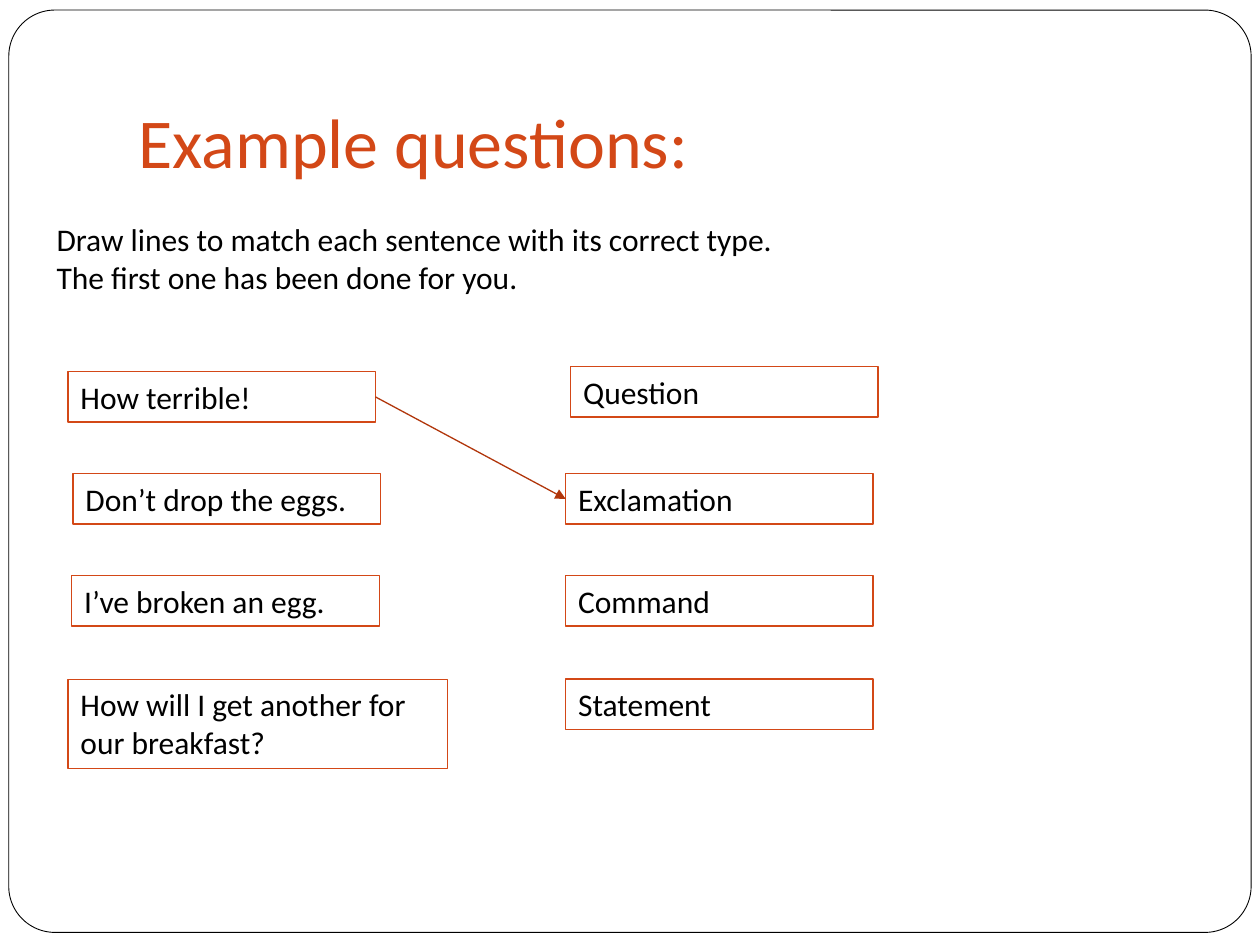
import pptx
import pptx.util
import pptx.dml.color
import pptx.enum.shapes
import pptx.enum.text
import pptx.oxml
import pptx.oxml.ns
from dataclasses import dataclass

Inches, Pt = pptx.util.Inches, pptx.util.Pt
SHAPES = pptx.enum.shapes.MSO_SHAPE
ANCHOR = pptx.enum.text.MSO_ANCHOR
ALIGN = pptx.enum.text.PP_ALIGN

TITLE = "Example questions:"
INSTRUCTIONS = [
    "Draw lines to match each sentence with its correct type.",
    "The first one has been done for you.",
]
SENTENCES = [
    ("How terrible!", 0.54, 2.95),
    ("Don’t drop the eggs.", 0.58, 3.76),
    ("I’ve broken an egg.", 0.57, 4.57),
    ("How will I get another for our breakfast?", 0.54, 5.39, 3.01, 0.71),
]
TYPES = [
    ("Question", 4.53, 2.91),
    ("Exclamation", 4.49, 3.76),
    ("Command", 4.49, 4.57),
    ("Statement", 4.49, 5.39),
]
SOLVED = ("How terrible!", "Exclamation")


@dataclass(frozen=True)
class Theme:
    font: str = "Calibri"
    title_size: int = 40
    body_size: int = 18
    accent: str = "D34817"
    arrow: str = "B1360B"
    text: str = "000000"
    paper: str = "FFFFFF"
    line: float = 0.75
    frame_line: float = 0.5


THEME = Theme()


def rgb(value):
    return pptx.dml.color.RGBColor.from_string(value)


def set_line(sp, color, width):
    sp.line.color.rgb = rgb(color)
    sp.line.width = Pt(width)


def write(tf, lines, size, color):
    tf.word_wrap = True
    tf.text = "\n".join(lines)
    for p in tf.paragraphs:
        p.alignment = ALIGN.LEFT
        for r in p.runs:
            r.font.name = THEME.font
            r.font.size = Pt(size)
            r.font.color.rgb = rgb(color)


def add_card(s, label, left, top, width=2.44, height=0.4):
    sp = s.shapes.add_shape(SHAPES.RECTANGLE, *map(Inches, (left, top, width, height)))
    sp.shadow.inherit = False
    sp.fill.background()
    set_line(sp, THEME.accent, THEME.line)
    tf = sp.text_frame
    write(tf, [label], THEME.body_size, THEME.text)
    tf.vertical_anchor = ANCHOR.TOP
    tf.auto_size = pptx.enum.text.MSO_AUTO_SIZE.SHAPE_TO_FIT_TEXT
    return sp


def add_arrow(s, start, end):
    cx = s.shapes.add_connector(pptx.enum.shapes.MSO_CONNECTOR.STRAIGHT, 0, 0, 0, 0)
    cx.begin_connect(start, 3)
    cx.end_connect(end, 1)
    set_line(cx, THEME.arrow, THEME.line)
    ns = pptx.oxml.ns.nsdecls("a")
    cx.line._get_or_add_ln().append(pptx.oxml.parse_xml(f'<a:tailEnd {ns} type="triangle"/>'))
    cx.element.spPr.append(pptx.oxml.parse_xml(f"<a:effectLst {ns}/>"))


def main():
    prs = pptx.Presentation()
    prs.slide_width, prs.slide_height = Inches(10), Inches(7.5)
    s = prs.slides.add_slide(prs.slide_layouts[5])

    frame = s.shapes.add_shape(
        SHAPES.ROUNDED_RECTANGLE, Inches(0.07), Inches(0.08), Inches(9.86), Inches(7.32)
    )
    frame.adjustments[0] = 0.05
    frame.shadow.inherit = False
    frame.fill.solid()
    frame.fill.fore_color.rgb = rgb(THEME.paper)
    set_line(frame, THEME.text, THEME.frame_line)

    title = s.shapes.title
    title.element.addprevious(frame.element)
    title.left, title.top, title.width, title.height = map(Inches, (1, 0.3, 8.5, 1.25))
    write(title.text_frame, [TITLE], THEME.title_size, THEME.accent)
    title.text_frame.vertical_anchor = ANCHOR.BOTTOM
    title.text_frame.margin_bottom = Inches(0.1)

    box = s.shapes.add_textbox(Inches(0.35), Inches(1.7), Inches(9.21), Inches(1.31))
    write(box.text_frame, INSTRUCTIONS, THEME.body_size, THEME.text)

    cards = {card[0]: add_card(s, *card) for card in SENTENCES + TYPES}
    add_arrow(s, *(cards[label] for label in SOLVED))

    prs.save("out.pptx")


if __name__ == "__main__":
    main()
